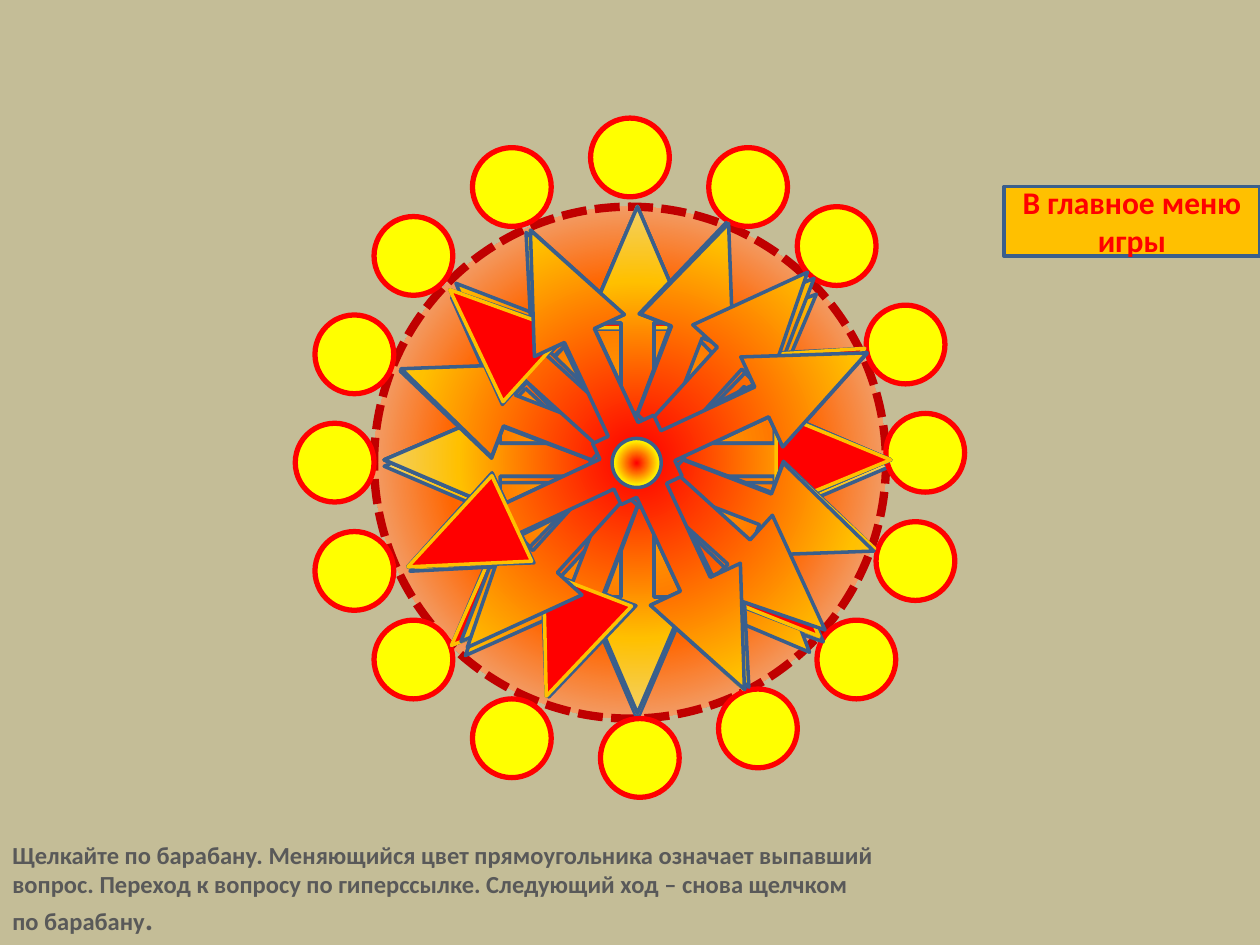
from math import cos, radians, sin

from lxml import etree
from pptx import Presentation
from pptx import util as u
from pptx.dml.color import RGBColor
from pptx.enum import dml, shapes, text
from pptx.oxml.ns import qn

KIND = shapes.MSO_SHAPE
GRID = 25.4 / 128  # grid step in cm, used by the disc and the coins
BLUE, GOLD, RED, YELLOW, PALE = "3A5F8C", "FFC000", "FF0000", "FFFF00", "E1E8F5"

# Coins around the wheel: left and top in grid steps
COINS = [(60, 12), (61, 73), (90, 42), (30, 43), (81, 21), (38, 22), (38, 63), (83, 63),
         (72, 15), (48, 15), (32, 32), (88, 31), (89, 53), (32, 54), (73, 70), (48, 71)]

# Wheel positions, from back to front
CENTRE = (12.85, 9.27)
SPINS = [(0, (12.85, 9.4)), (42.8, (12.85, 9.47)), (226.1, (12.78, 9.47))] + [
    (angle, CENTRE) for angle in (270, 155.1, 180, 0, 90, 134.2, 334.9, 20.9,
                                  63.9, 110.5, 201.1, 312.2, 245)]


def colour(value):
    return RGBColor.from_string(value)


def fill_radial(shape, stops):
    """Fill with evenly spaced colours from the centre outwards."""
    shape.fill.background()
    properties = shape._element.spPr
    gradient = etree.Element(qn("a:gradFill"), rotWithShape="1")
    stop_list = etree.SubElement(gradient, qn("a:gsLst"))
    for index, value in enumerate(stops):
        position = str(index * 100000 // (len(stops) - 1))
        stop = etree.SubElement(stop_list, qn("a:gs"), pos=position)
        etree.SubElement(stop, qn("a:srgbClr"), val=value)
    route = etree.SubElement(gradient, qn("a:path"), path="circle")
    etree.SubElement(route, qn("a:fillToRect"), l="50000", t="50000", r="50000", b="50000")
    properties.replace(properties.find(qn("a:noFill")), gradient)


def add_figure(page, kind, left, top, width, height, fill=None, line=None, weight=2, angle=0):
    """Add a preset shape; fill is a colour, a list of colours or None."""
    shape = page.shapes.add_shape(kind, u.Cm(left), u.Cm(top), u.Cm(width), u.Cm(height))
    shape.shadow.inherit = False
    shape.rotation = angle
    if isinstance(fill, list):
        fill_radial(shape, fill)
    elif fill:
        shape.fill.solid()
        shape.fill.fore_color.rgb = colour(fill)
    else:
        shape.fill.background()
    if line:
        shape.line.color.rgb = colour(line)
        shape.line.width = u.Pt(weight)
    else:
        shape.line.fill.background()
    return shape


def add_span(para, words, size=18, tint="000000", bold=True, font="Calibri"):
    span = para.add_run()
    span.text = words
    span.font.name = font
    span.font.size = u.Pt(size)
    span.font.bold = bold
    span.font.color.rgb = colour(tint)


def add_centred(page, kind, x, y, width, height, **style):
    return add_figure(page, kind, x - width / 2, y - height / 2, width, height, **style)


def add_disc(page):
    place = [steps * GRID for steps in (38, 21, 52, 52)]
    add_figure(page, KIND.OVAL, *place, fill=[GOLD, "FF6600", PALE])
    rim = add_figure(page, KIND.OVAL, *place, line="C00000", weight=4.75)
    rim.line.dash_style = dml.MSO_LINE.SQUARE_DOT


def add_wheel(page, angle, centre):
    """Four arrows, a pointer on one of them, and the hub, turned together."""
    x, y = centre
    turn = radians(angle)

    def turned(right, down):
        return (x + right * cos(turn) - down * sin(turn),
                y + right * sin(turn) + down * cos(turn))

    arrows = add_centred(page, KIND.QUAD_ARROW_CALLOUT, x, y, 10.21, 10.21,
                         fill=[RED, GOLD, PALE], line=BLUE, angle=angle)
    for index, ratio in enumerate((0.065, 0.098, 0.229, 0.133)):
        arrows.adjustments[index] = ratio
    add_centred(page, KIND.ISOSCELES_TRIANGLE, *turned(0, -3.95), 1.9, 2.31,
                fill=RED, line=GOLD, angle=angle)
    add_centred(page, KIND.OVAL, *turned(-0.05, -0.04), 0.99, 0.99,
                fill=[RED, YELLOW, PALE], line=BLUE, angle=angle)


def add_coins(page):
    for column, row in COINS:
        add_figure(page, KIND.OVAL, column * GRID, row * GRID, 8 * GRID, 8 * GRID,
                   fill=YELLOW, line=RED, weight=3)


def add_hint(page):
    box = page.shapes.add_textbox(u.Cm(0), u.Cm(16.81), u.Cm(17.86), u.Cm(2.24))
    box.text_frame.word_wrap = True
    para = box.text_frame.paragraphs[0]
    add_span(para, "Щелкайте по барабану. Меняющийся цвет прямоугольника означает "
                   "выпавший вопрос. Переход к вопросу по гиперссылке. Следующий ход – "
                   "снова щелчком по барабану", size=14, tint="595959")
    add_span(para, ".", tint="595959")


def add_button(page):
    button = add_figure(page, KIND.ACTION_BUTTON_CUSTOM, 20.24, 3.76, 5.16, 1.4,
                        fill=GOLD, line=BLUE)
    frame = button.text_frame
    frame.word_wrap = True
    frame.vertical_anchor = text.MSO_ANCHOR.MIDDLE
    para = frame.paragraphs[0]
    para.alignment = text.PP_ALIGN.CENTER
    add_span(para, "В главное меню игры", tint=RED)


def main():
    deck = Presentation()
    deck.slide_width, deck.slide_height = u.Cm(25.4), u.Cm(19.05)
    page = deck.slides.add_slide(deck.slide_layouts[6])
    page.background.fill.solid()
    page.background.fill.fore_color.rgb = colour("C4BD97")

    # Disc, first wheel, coins, then the remaining wheels
    add_disc(page)
    add_wheel(page, *SPINS[0])
    add_coins(page)
    for spin in SPINS[1:]:
        add_wheel(page, *spin)

    # Texts
    add_hint(page)
    add_button(page)
    deck.save("out.pptx")


if __name__ == "__main__":
    main()
